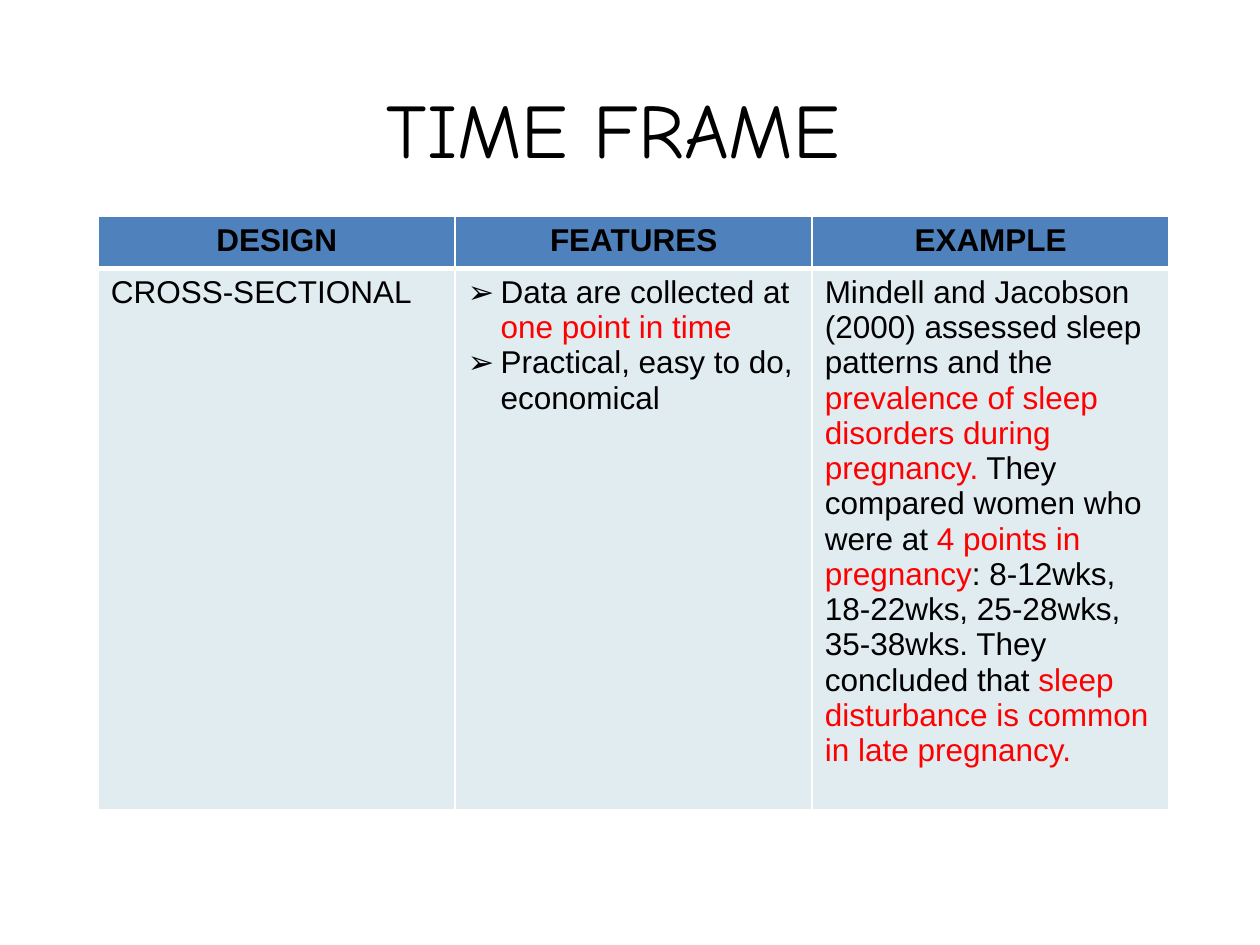
from lxml import etree
from pptx import Presentation
from pptx.dml.color import RGBColor
from pptx.enum import text as t
from pptx.oxml import ns
from pptx.util import Inches, Pt

HUES = {"ink": "000000", "key": "FF0000", "head": "4F81BD",
        "body": "E1ECF1", "line": "FFFFFF"}
HEADS = ["DESIGN", "FEATURES", "EXAMPLE"]
BODY = [
    [["CROSS-SECTIONAL"]],
    [["Data are collected at ", "one point in time"],
     ["Practical, easy to do, economical"]],
    [["Mindell and Jacobson (2000) assessed sleep patterns and the ",
      "prevalence of sleep disorders during pregnancy.",
      " They compared women who were at ",
      "4 points in pregnancy",
      ": 8-12wks, 18-22wks, 25-28wks, 35-38wks. They concluded that ",
      "sleep disturbance is common in late pregnancy."]],
]


def style(run, size, face="Arial", hue="ink", bold=False):
    """Set the font of a run."""
    font = run.font
    font.size, font.name, font.bold = Pt(size), face, bold
    font.color.rgb = RGBColor.from_string(HUES[hue])


def add_title(slide, box, words):
    """Place the centred title in its box."""
    frame = slide.shapes.add_textbox(*map(Inches, box)).text_frame
    frame.word_wrap = True
    frame.vertical_anchor = t.MSO_ANCHOR.MIDDLE
    frame.text = words
    par = frame.paragraphs[0]
    par.alignment = t.PP_ALIGN.CENTER
    style(par.runs[0], 44, "Comic Neue")


def edge(cell, **sides):
    """Draw the cell borders, each side with its width in points."""
    props = cell._tc.get_or_add_tcPr()
    for side, width in sides.items():
        line = etree.SubElement(props, ns.qn("a:ln" + side), w=str(Pt(width)))
        fill = etree.SubElement(line, ns.qn("a:solidFill"))
        etree.SubElement(fill, ns.qn("a:srgbClr"), val=HUES["line"])


def bullet(par):
    """Give a paragraph an arrow bullet with a hanging indent."""
    props = par._p.get_or_add_pPr()
    props.set("marL", str(Inches(0.26)))
    props.set("indent", str(-Inches(0.26)))
    etree.SubElement(props, ns.qn("a:buFont"), typeface="Arial")
    etree.SubElement(props, ns.qn("a:buChar"), char="➢")


def fill_cell(cell, pars, head=False):
    """Write paragraphs in a cell, with every second run in the key colour."""
    edge(cell, L=1, R=1, T=1 if head else 3, B=3 if head else 1)
    cell.fill.solid()
    cell.fill.fore_color.rgb = RGBColor.from_string(
        HUES["head" if head else "body"])
    frame = cell.text_frame
    for i, parts in enumerate(pars):
        par = frame.add_paragraph() if i else frame.paragraphs[0]
        if head:
            par.alignment = t.PP_ALIGN.CENTER
        if len(pars) > 1:
            bullet(par)
        for j, part in enumerate(parts):
            run = par.add_run()
            run.text = part
            style(run, 18, hue="key" if j % 2 else "ink", bold=head)


def add_grid(slide, box, top):
    """Place the design table in its box, with a header row of height top."""
    shape = slide.shapes.add_table(2, len(HEADS), *map(Inches, box))
    table = shape.table
    table.rows[0].height = Inches(top)
    table.rows[1].height = Inches(box[3] - top)
    for col, (head, pars) in enumerate(zip(HEADS, BODY)):
        fill_cell(table.cell(0, col), [[head]], head=True)
        fill_cell(table.cell(1, col), pars)


def main():
    """Build the slide and save it."""
    deck = Presentation()
    deck.slide_width, deck.slide_height = Inches(10), Inches(7.5)
    slide = deck.slides.add_slide(deck.slide_layouts[6])
    add_title(slide, (0.62, 0.39, 8.5, 1.25), "TIME FRAME")
    add_grid(slide, (0.78, 1.72, 8.5, 4.71), 0.41)
    deck.save("out.pptx")


if __name__ == "__main__":
    main()
